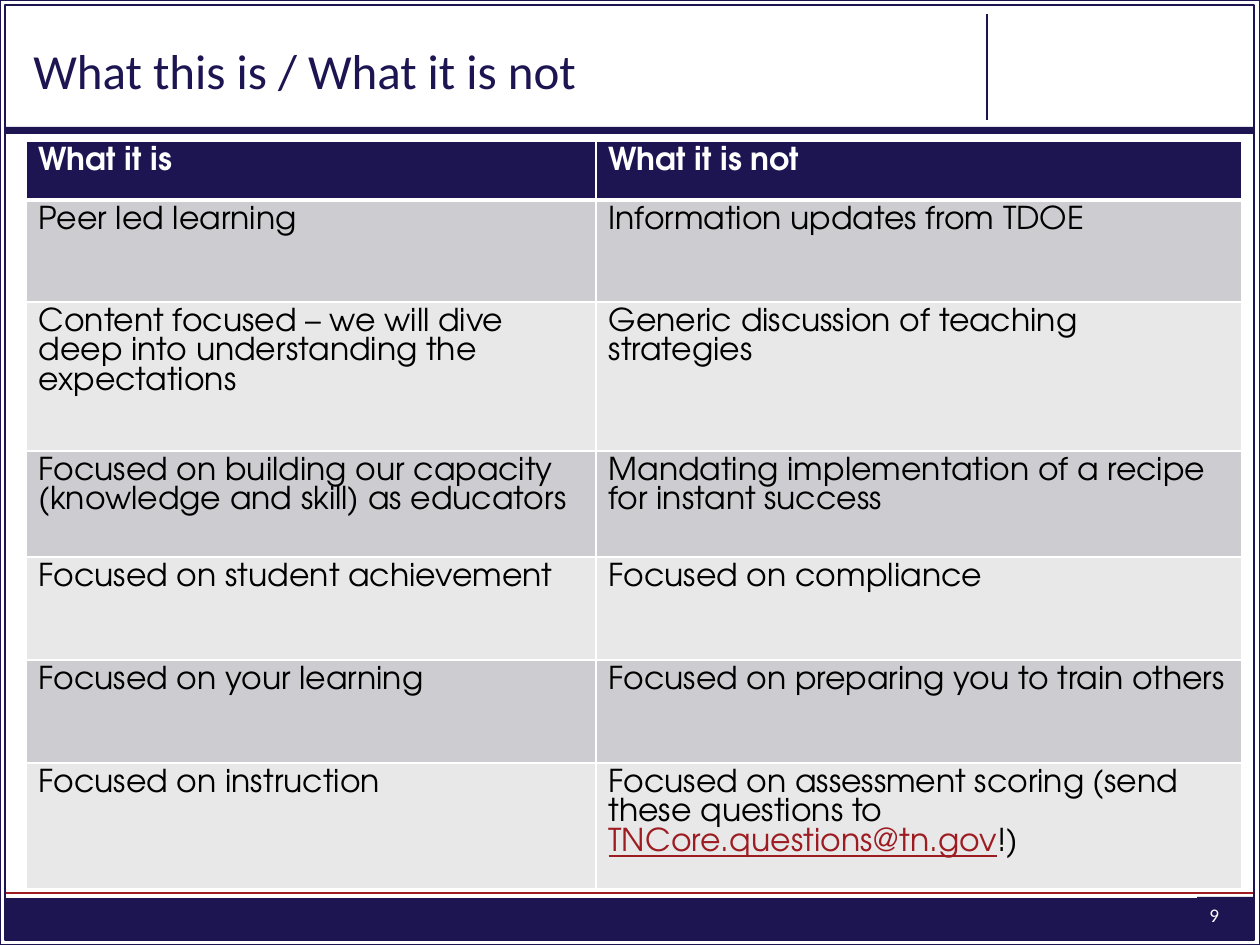
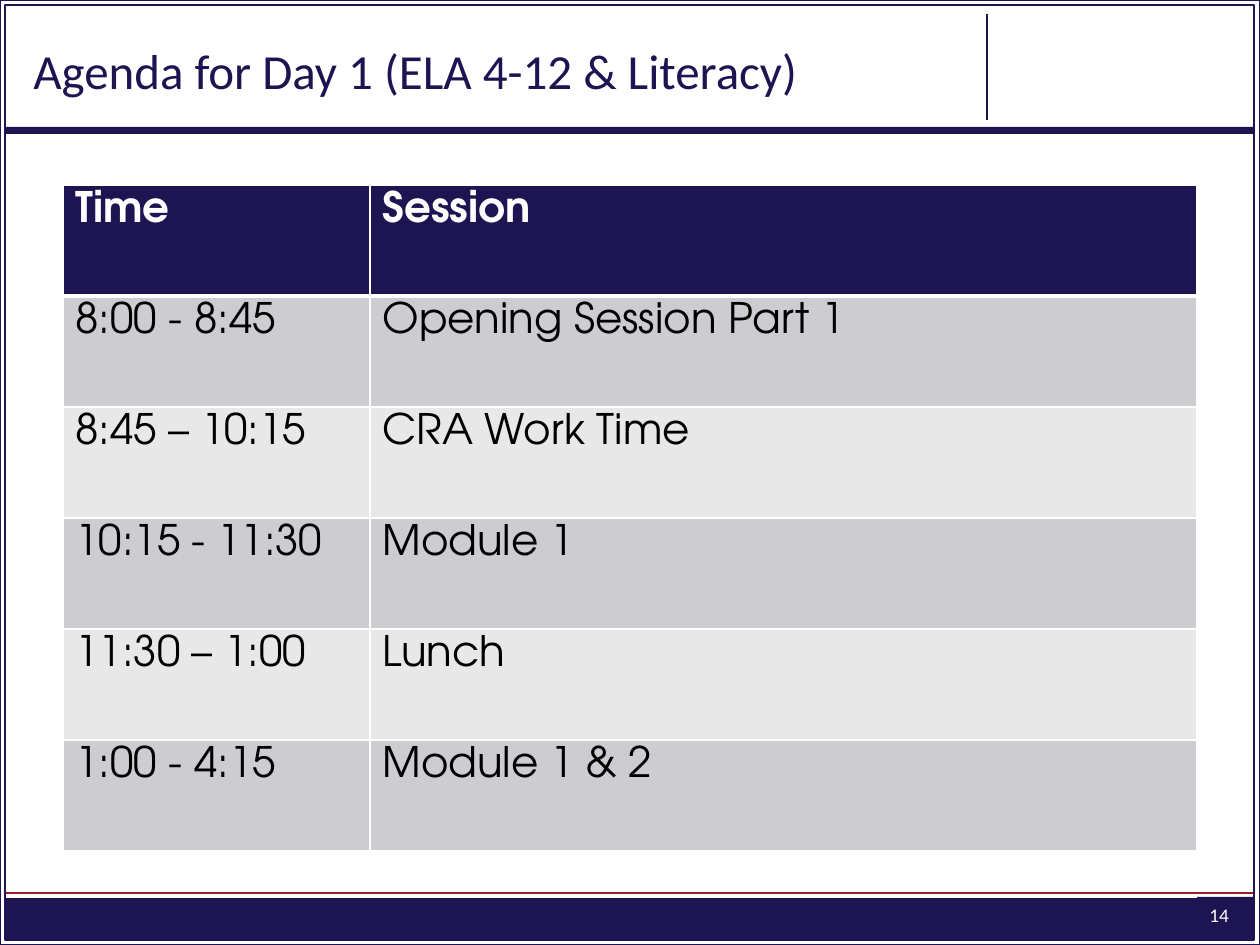
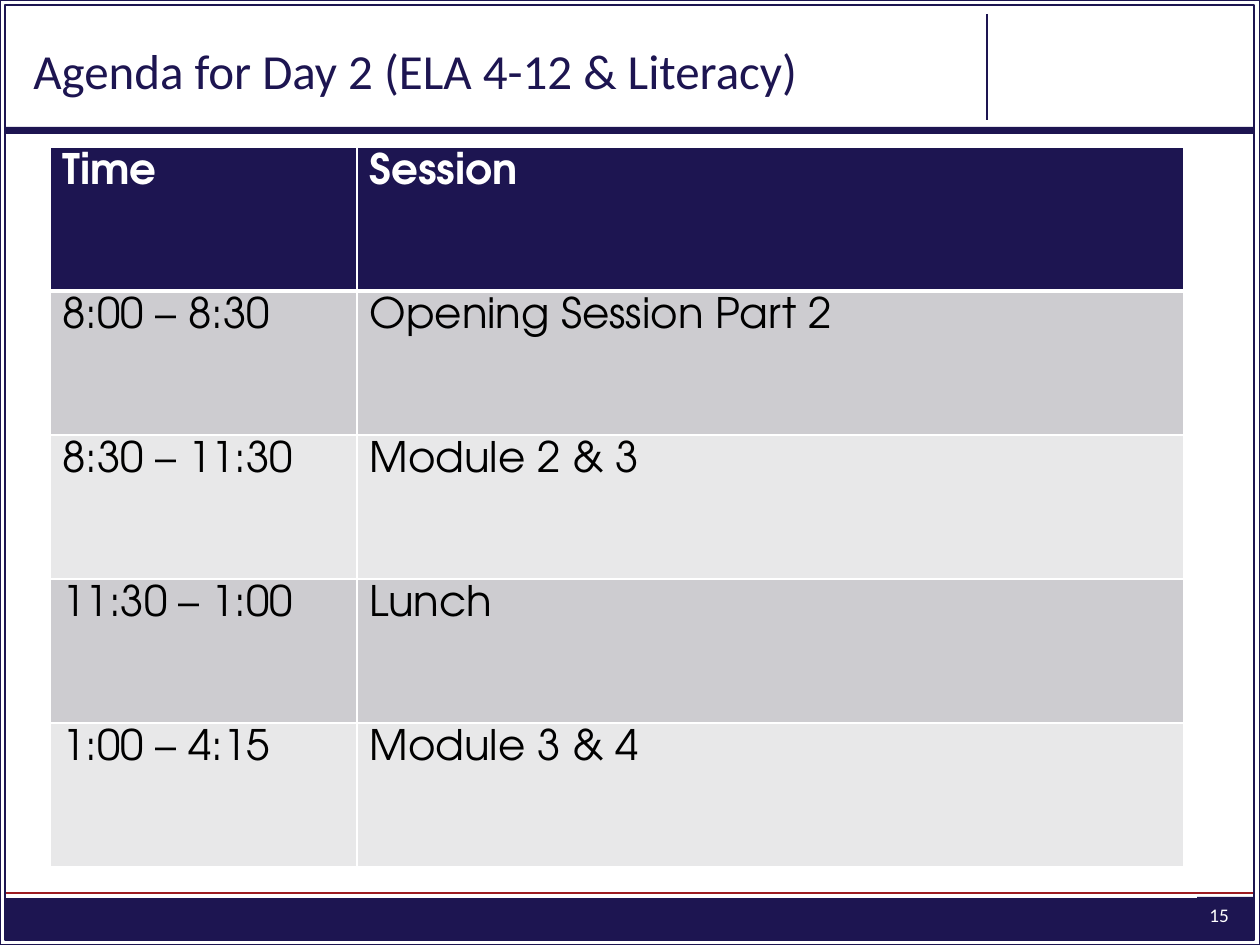
from lxml.etree import SubElement
from pptx import Presentation
from pptx.dml.color import RGBColor
from pptx.enum.shapes import MSO_CONNECTOR as Connector, MSO_SHAPE as Shape
from pptx.enum.text import MSO_ANCHOR as Anchor
from pptx.oxml.ns import qn
from pptx.util import Emu, Pt

COLORS = {
    "navy": "1D1551",
    "red": "9D1C21",
    "white": "FFFFFF",
    "black": "000000",
    "dark_band": "CDCCD0",
    "light_band": "E8E8E9",
}
HEADING_FONT = "Calibri"
TABLE_FONT = "TeX Gyre Adventor"
PX_PER_INCH = 126
WIDTH, HEIGHT = 1260, 945
EMAIL = "TNCore.questions@tn.gov"

COMPARISON = [
    ("What it is", "What it is not"),
    ("Peer led learning", "Information updates from TDOE"),
    ("Content focused – we will dive deep into understanding the expectations",
     "Generic discussion of teaching strategies"),
    ("Focused on building our capacity (knowledge and skill) as educators",
     "Mandating implementation of a recipe for instant success"),
    ("Focused on student achievement", "Focused on compliance"),
    ("Focused on your learning", "Focused on preparing you to train others"),
    ("Focused on instruction",
     f"Focused on assessment scoring (send these questions to {EMAIL}!)"),
]
DAY_ONE = [
    ("Time", "Session"),
    ("8:00 - 8:45", "Opening Session Part 1"),
    ("8:45 – 10:15", "CRA Work Time"),
    ("10:15 - 11:30", "Module 1"),
    ("11:30 – 1:00", "Lunch"),
    ("1:00 - 4:15", "Module 1 & 2"),
]
DAY_TWO = [
    ("Time", "Session"),
    ("8:00 – 8:30", "Opening Session Part 2"),
    ("8:30 – 11:30", "Module 2 & 3"),
    ("11:30 – 1:00", "Lunch"),
    ("1:00 – 4:15", "Module 3 & 4"),
]
AGENDA_COLUMNS = [307, 827]


def px(length):
    """Turn a length in px into EMU."""
    return Emu(round(length * 914400 / PX_PER_INCH))


def rgb(name):
    """Look up a named colour."""
    return RGBColor.from_string(COLORS[name])


def write(frame, text, *, font, size, color, bold=False, underline=False):
    """Append formatted text to the first paragraph of a text frame."""
    run = frame.paragraphs[0].add_run()
    run.text = text
    run.font.name = font
    run.font.size = Pt(size)
    run.font.color.rgb = rgb(color)
    run.font.bold = bold
    run.font.underline = underline


def add_box(slide, box, fill=None, line=None, weight=1):
    """Add a rectangle with an optional fill and outline."""
    panel = slide.shapes.add_shape(Shape.RECTANGLE, *map(px, box))
    panel.shadow.inherit = False
    if fill:
        panel.fill.solid()
        panel.fill.fore_color.rgb = rgb(fill)
    else:
        panel.fill.background()
    if line:
        panel.line.color.rgb = rgb(line)
        panel.line.width = Pt(weight)
    else:
        panel.line.fill.background()
    return panel


def add_rule(slide, start, end, color):
    """Add a thin straight line."""
    rule = slide.shapes.add_connector(Connector.STRAIGHT, *map(px, start + end))
    rule.line.color.rgb = rgb(color)
    rule.line.width = Pt(1)
    SubElement(rule._element.spPr, qn("a:effectLst"))


def set_borders(cell, **weights):
    """Give each side of a cell a white border, 1 pt unless stated."""
    properties = cell._tc.get_or_add_tcPr()
    for side in "LRTB":
        width = Pt(weights.get(side, 1))
        edge = SubElement(properties, qn(f"a:ln{side}"), w=str(width))
        fill = SubElement(edge, qn("a:solidFill"))
        SubElement(fill, qn("a:srgbClr"), val=COLORS["white"])


def fill_cell(cell, color):
    """Fill a table cell with a named colour."""
    cell.fill.solid()
    cell.fill.fore_color.rgb = rgb(color)


def add_header(slide, box, title):
    """Draw the title, the divider to its right and the bar below it."""
    left, top, width, height = box
    add_box(slide, (left, top + height - 7, width, 7), fill="navy")
    divider = left + 982
    add_rule(slide, (divider, top + 9), (divider, top + height - 14), "navy")
    heading = slide.shapes.add_textbox(
        *map(px, (left + 16, top + 15, 906, 100))).text_frame
    heading.word_wrap = True
    heading.vertical_anchor = Anchor.MIDDLE
    write(heading, title, font=HEADING_FONT, size=28, color="navy")


def add_footer(slide, box, number):
    """Draw the red rule, the navy band and the slide number."""
    left, top, width, height = box
    add_rule(slide, (left, top), (left + width, top), "red")
    band_top, band_height = top + 4, height - 4
    band = slide.shapes.add_table(
        1, 1, *map(px, (left, band_top, 1202, band_height))).table
    band_cell = band.cell(0, 0)
    band_cell.margin_top = band_cell.margin_bottom = 0
    fill_cell(band_cell, "navy")
    page = add_box(slide, (left + width - 57, band_top, 57, band_height),
                   fill="navy").text_frame
    page.vertical_anchor = Anchor.TOP
    page.paragraphs[0].alignment = 1
    write(page, str(number), font=HEADING_FONT, size=11, color="white")


def add_frame(slide, title, number):
    """Draw the parts that every slide shares."""
    add_box(slide, (0, 0, WIDTH, HEIGHT), line="navy")
    add_header(slide, (5, 5, 1249, 129), title)
    add_footer(slide, (5, 893, 1249, 47), number)
    add_box(slide, (5, 5, 1249, 935), line="navy", weight=0)


def add_grid(slide, origin, rows, columns, heights, size):
    """Draw a two-tone table under a navy header row."""
    extent = (sum(columns), sum(heights))
    grid = slide.shapes.add_table(
        len(rows), len(columns), *map(px, origin + extent)).table
    for column, width in zip(grid.columns, columns):
        column.width = px(width)
    for index, (row, height, texts) in enumerate(zip(grid.rows, heights, rows)):
        row.height = px(height)
        header = index == 0
        band = "navy" if header else "dark_band" if index % 2 else "light_band"
        style = dict(font=TABLE_FONT, size=size, bold=header)
        color = "white" if header else "black"
        for cell, text in zip(row.cells, texts):
            set_borders(cell, T=3 if index == 1 else 1, B=3 if header else 1)
            fill_cell(cell, band)
            before, email, after = text.partition(EMAIL)
            write(cell.text_frame, before, color=color, **style)
            if email:
                write(cell.text_frame, email, color="red", underline=True, **style)
                write(cell.text_frame, after, color=color, **style)


def main():
    """Build the three slides and save them."""
    deck = Presentation()
    deck.slide_width, deck.slide_height = px(WIDTH), px(HEIGHT)
    pages = [
        ("What this is / What it is not", 9, (26, 141), COMPARISON,
         [570, 646], [59, 102, 149, 106, 103, 103, 105], 18),
        ("Agenda for Day 1 (ELA 4-12 & Literacy)", 14, (63, 185), DAY_ONE,
         AGENDA_COLUMNS, [111] * len(DAY_ONE), 24),
        ("Agenda for Day 2 (ELA 4-12 & Literacy)", 15, (50, 147), DAY_TWO,
         AGENDA_COLUMNS, [144] * len(DAY_TWO), 24),
    ]
    for title, number, *grid in pages:
        slide = deck.slides.add_slide(deck.slide_layouts[6])
        add_frame(slide, title, number)
        add_grid(slide, *grid)
    deck.save("out.pptx")


if __name__ == "__main__":
    main()
